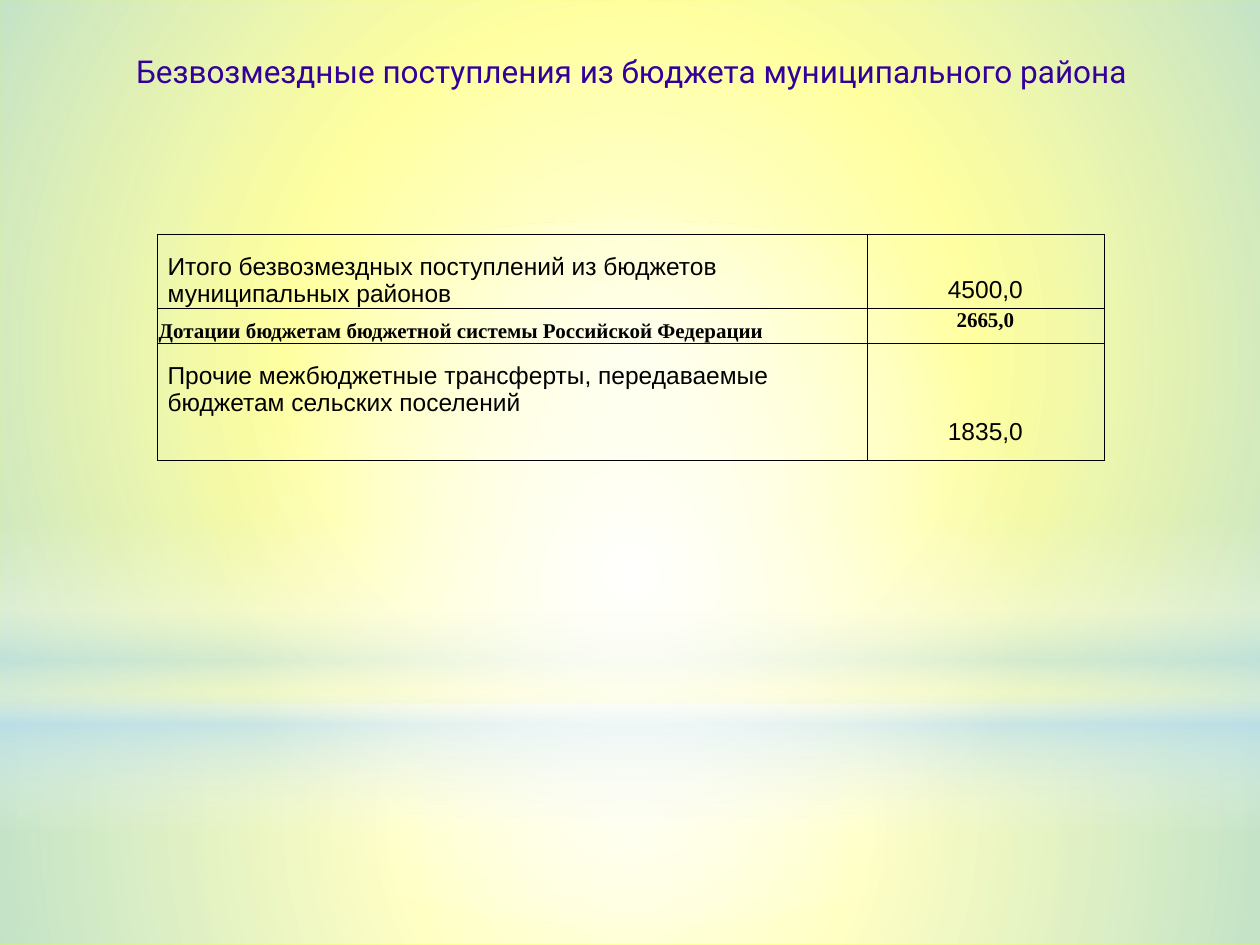
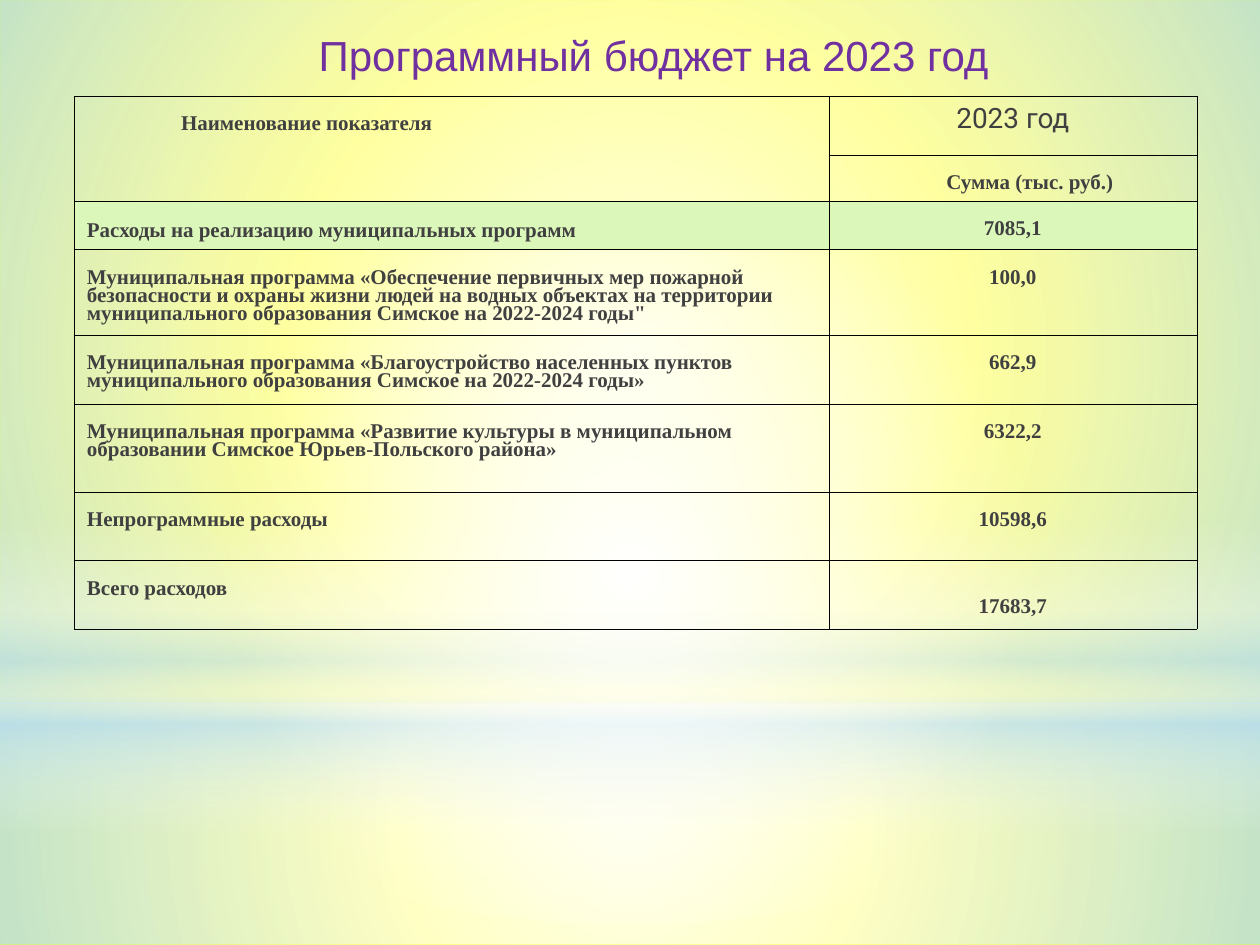
"""Build two budget slides: grants received and spending by programme."""
import pptx
import pptx.dml.color
import pptx.enum.shapes
import pptx.enum.text
import pptx.oxml
import pptx.oxml.ns
import pptx.util

Pt = pptx.util.Pt
Shape = pptx.enum.shapes.MSO_SHAPE
Align = pptx.enum.text.PP_ALIGN
Anchor = pptx.enum.text.MSO_ANCHOR
SPACE = pptx.oxml.ns.nsdecls("a")
BLACK, GREY, WHITE, SKY, LIME = "000000", "404040", "FFFFFF", "B4DCFA", "DCF7BA"
SANS, SERIF, ROBOTO = "Arial", "Times New Roman", "Roboto"


def hue(code):
    return pptx.dml.color.RGBColor.from_string(code)


def put(frame, text, size, face, tint, bold=False, mid=True, lead=None):
    frame.word_wrap = True
    para = frame.paragraphs[0]
    para.text = text
    para.alignment = Align.CENTER if mid else Align.LEFT
    para.line_spacing = lead
    para.font.size = Pt(size)
    para.font.name = face
    para.font.bold = bold
    para.font.color.rgb = hue(tint)
    return para


deck = pptx.Presentation()
deck.slide_width, deck.slide_height = Pt(720), Pt(540)
blank = deck.slide_layouts[6]
first, second = [deck.slides.add_slide(blank) for _ in range(2)]

master = deck.slide_master
master.background.fill.solid()
master.background.fill.fore_color.rgb = hue("FFFF00")
round_path = '<a:path path="circle"><a:fillToRect l="50000" t="50000" r="50000" b="50000"/></a:path>'
down_path = '<a:lin ang="5400000" scaled="0"/>'
glows = [
    (Shape.RECTANGLE, 402, 138, round_path, [(0, WHITE, 91), (37, WHITE, 76), (100, SKY, 79)]),
    (Shape.RECTANGLE, 0, 402, round_path, [(0, WHITE, 89), (48, WHITE, 62), (100, SKY, 79)]),
    (Shape.RECTANGLE, 296.5, 180, down_path,
     [(0, WHITE, 0), (29, WHITE, 30), (45, SKY, 40), (55, WHITE, 26), (65, SKY, 60), (100, WHITE, 0)]),
    (Shape.OVAL, 126, 402, round_path, [(0, WHITE, 100), (56, WHITE, 0)]),
]
for num, (kind, top, high, path, stops) in enumerate(glows, 20):
    glow = first.shapes.add_shape(kind, 0, Pt(top), Pt(720), Pt(high))
    glow.shadow.inherit = False
    glow.line.fill.background()
    glow.fill.background()
    marks = "".join(
        f'<a:gs pos="{pos * 1000}"><a:srgbClr val="{code}"><a:alpha val="{alpha * 1000}"/></a:srgbClr></a:gs>'
        for pos, code, alpha in stops)
    blend = pptx.oxml.parse_xml(
        f'<a:gradFill {SPACE} rotWithShape="1"><a:gsLst>{marks}</a:gsLst>{path}</a:gradFill>')
    props = glow.element.spPr
    props.replace(props.find(pptx.oxml.ns.qn("a:noFill")), blend)
    glow.element.xpath("./p:nvSpPr/p:cNvPr")[0].set("id", str(num))
    master.shapes.element.append(glow.element)

titles = [
    (first, "Безвозмездные поступления из бюджета муниципального района",
     (-2.9, 26, 723, 29.5), 11.7, 18, ROBOTO, "330099", Anchor.TOP),
    (second, "Программный бюджет на 2023 год",
     (36.7, 8.6, 633.6, 45.4), 47.2, 24, SANS, "7030A0", Anchor.MIDDLE),
]
for slide, text, area, left, size, face, tint, anchor in titles:
    frame = slide.shapes.add_textbox(*map(Pt, area)).text_frame
    frame.margin_left = Pt(left)
    frame.vertical_anchor = anchor
    put(frame, text, size, face, tint)

grants = [
    ("Итого безвозмездных поступлений из бюджетов муниципальных районов", "4500,0"),
    ("Дотации бюджетам бюджетной системы Российской Федерации", "2665,0"),
    ("Прочие межбюджетные трансферты, передаваемые бюджетам сельских поселений", "1835,0"),
]
costs = [
    ("Наименование показателя", "2023 год"),
    ("", "Сумма (тыс. руб.)"),
    ("Расходы на реализацию муниципальных программ", "7085,1"),
    ("Муниципальная программа «Обеспечение первичных мер пожарной безопасности и охраны жизни людей "
     "на водных объектах на территории муниципального образования Симское на 2022-2024 годы\"", "100,0"),
    ("Муниципальная программа «Благоустройство населенных пунктов муниципального образования "
     "Симское на 2022-2024 годы»", "662,9"),
    ("Муниципальная программа «Развитие культуры в муниципальном образовании Симское "
     "Юрьев-Польского района»", "6322,2"),
    ("Непрограммные расходы", "10598,6"),
    ("Всего расходов", "17683,7"),
]
plans = [
    (first, grants, (90, 134), (405.5, 135.2), (42, 20, 67.2)),
    (second, costs, (42.5, 54.7), (431.3, 210), (34, 25.5, 27.5, 46.5, 39.5, 50.5, 39, 39)),
]
grids = []
for slide, data, (left, top), wides, highs in plans:
    grid = slide.shapes.add_table(
        len(data), 2, Pt(left), Pt(top), Pt(sum(wides)), Pt(sum(highs))).table
    grid.first_row = grid.horz_banding = False
    for col, wide in zip(grid.columns, wides):
        col.width = Pt(wide)
    for row, high in zip(grid.rows, highs):
        row.height = Pt(high)
    for cell in grid.iter_cells():
        for side in "LRTB":
            cell._tc.get_or_add_tcPr().append(pptx.oxml.parse_xml(
                f'<a:ln{side} {SPACE} w="762"><a:solidFill><a:srgbClr val="{BLACK}"/></a:solidFill></a:ln{side}>'))
        cell.fill.background()
    grids.append(grid)
gift, cost = grids

tops = [(7.9, 24), (0.7, 0.7), (10.8, 43)]
for r, pair in enumerate(grants):
    total = r == 1
    for c, text in enumerate(pair):
        cell = gift.cell(r, c)
        cell.margin_left = cell.margin_right = Pt(0.7 if total else 5.8)
        cell.margin_top, cell.margin_bottom = Pt(tops[r][c]), 0
        cell.vertical_anchor = Anchor.BOTTOM if c == 0 and r < 2 else Anchor.TOP
        put(cell.text_frame, text, 12 if total else 14, SERIF if total else SANS, BLACK, total, c == 1)

cost.cell(0, 0).merge(cost.cell(1, 0))
for r, pair in enumerate(costs):
    for c, text in enumerate(pair):
        if not text:
            continue
        cell = cost.cell(r, c)
        cell.margin_top = Pt(11.5)
        put(cell.text_frame, text, 12, SERIF, GREY, True, c == 1 and r != 1, 0.78)
        if r == 2:
            cell.fill.solid()
            cell.fill.fore_color.rgb = hue(LIME)
cost.cell(0, 0).margin_left = Pt(61)
cost.cell(1, 1).margin_left = Pt(67)
cost.cell(2, 0).vertical_anchor = Anchor.MIDDLE
cost.cell(7, 1).margin_top = Pt(22.3)
year = cost.cell(0, 1)
year.margin_top = Pt(3.6)
put(year.text_frame, costs[0][1], 16, ROBOTO, GREY, lead=1.01).space_before = Pt(7)

deck.save("out.pptx")
